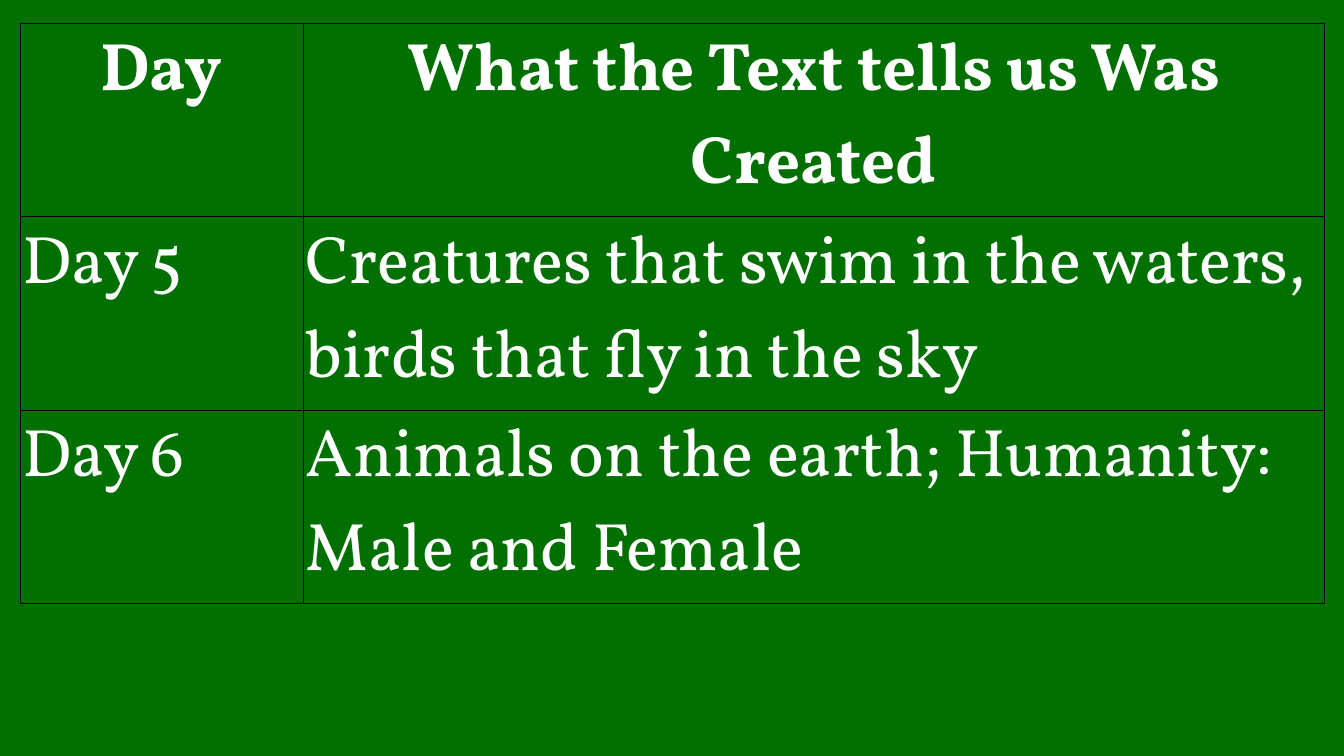
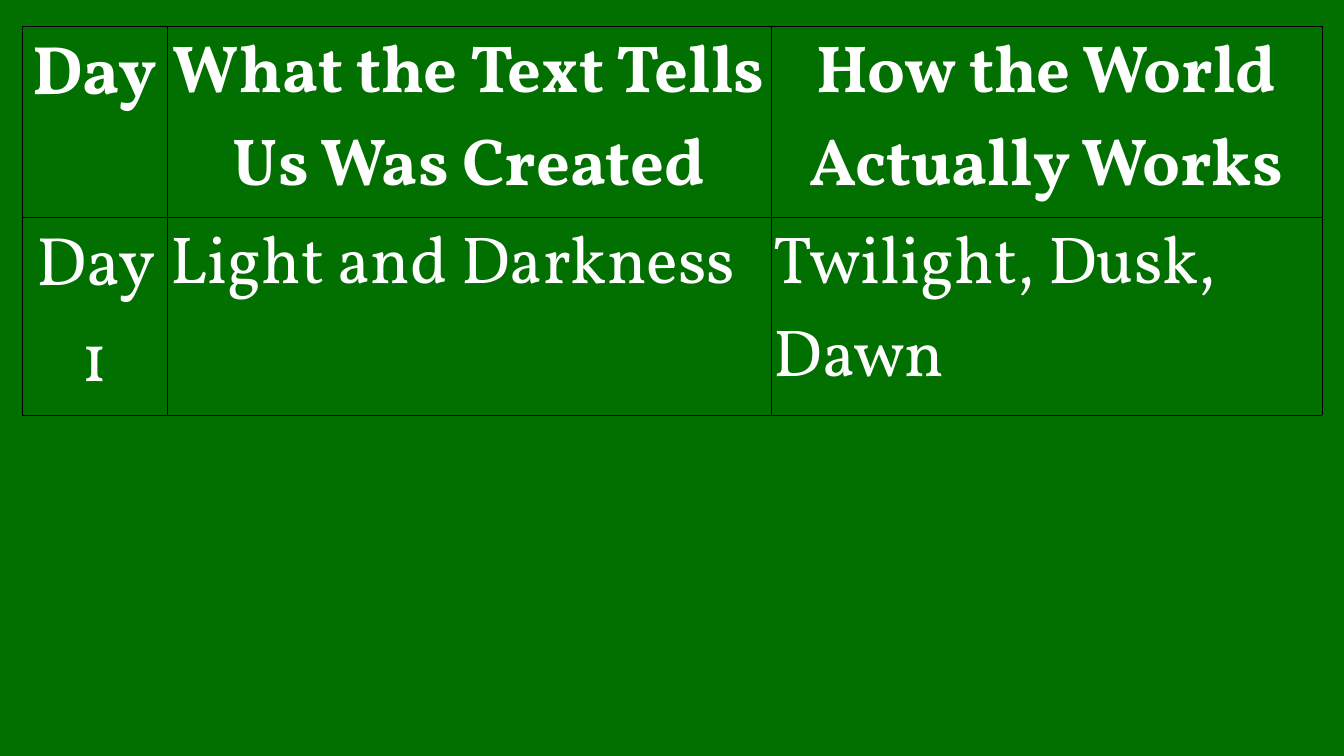
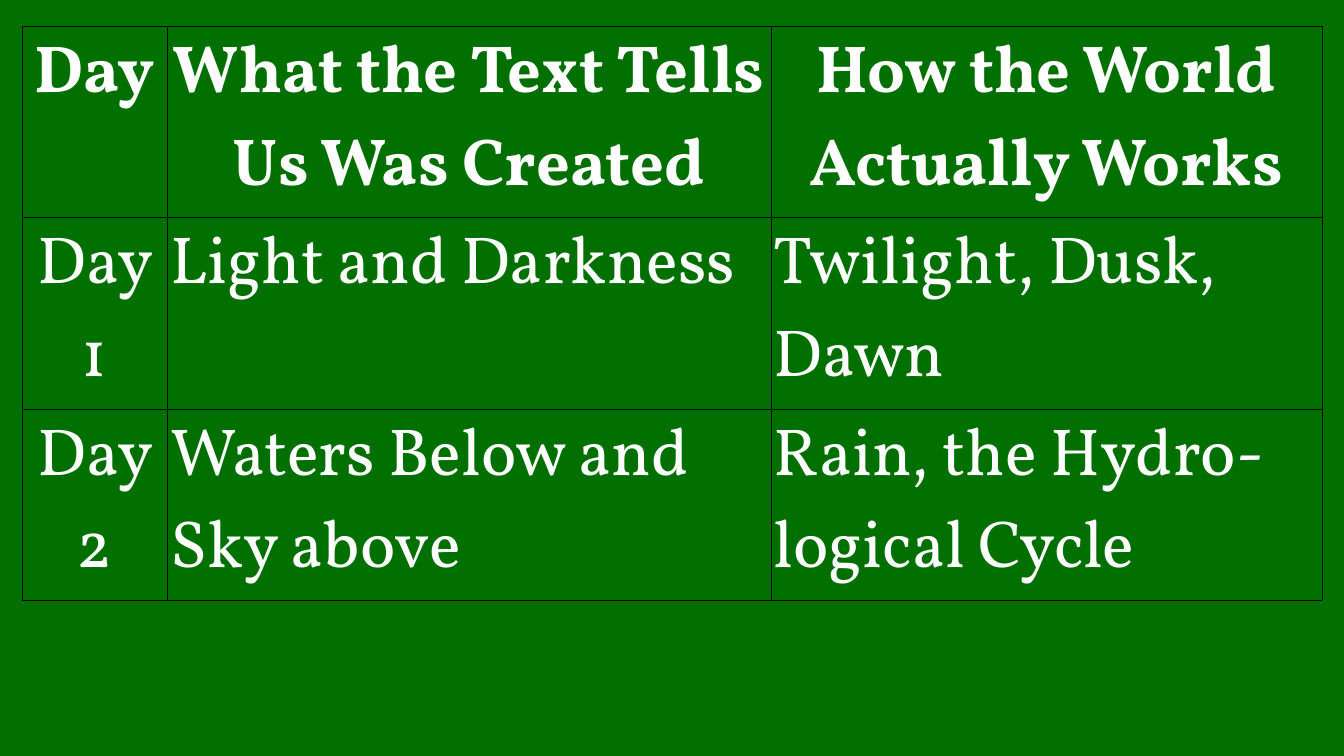
import dataclasses

import lxml.etree
import pptx
import pptx.dml.color
import pptx.enum.text
import pptx.oxml.ns
import pptx.util

Pt = pptx.util.Pt
CENTER = pptx.enum.text.PP_ALIGN.CENTER
LEFT = pptx.enum.text.PP_ALIGN.LEFT


@dataclasses.dataclass(frozen=True)
class Theme:
    green: str = "027001"
    white: str = "FFFFFF"
    black: str = "000000"
    font: str = "Vollkorn"
    wide_size: float = 96
    body_size: float = 95
    large_day_size: float = 98
    border: float = 0.35
    inset: float = 4.32


@dataclasses.dataclass(frozen=True)
class Grid:
    """Corner, column widths and row heights of a table, in points."""
    left: float
    top: float
    columns: tuple
    rows: tuple


THEME = Theme()
CREATED_GRID = Grid(28.1, 33.1, (404.64, 1459.44), (133.2, 200.88, 133.2))
COMPARED_GRID = Grid(31.68, 37.44, (207.36, 861.84, 787.68), (154.08, 103.68, 112.32))

CREATED_ROWS = [
    ("Day", "What the Text tells us Was Created"),
    ("Day 5", "Creatures that swim in the waters, birds that fly in the sky"),
    ("Day 6", "Animals on the earth; Humanity: Male and Female"),
]
COMPARED_ROWS = [
    ("Day", "What the Text Tells Us Was Created", "How the World Actually Works"),
    ("Day 1", "Light and Darkness", "Twilight, Dusk, Dawn"),
    ("Day 2", "Waters Below and Sky above", "Rain, the Hydro-logical Cycle"),
]


def color(value):
    return pptx.dml.color.RGBColor.from_string(value)


def set_attributes(target, values):
    for name, value in values.items():
        setattr(target, name, value)


def add_borders(cell):
    qn = pptx.oxml.ns.qn
    properties = cell._tc.get_or_add_tcPr()
    for position, side in enumerate(("lnL", "lnR", "lnT", "lnB")):
        line = lxml.etree.Element(qn(f"a:{side}"), w=str(int(Pt(THEME.border))))
        fill = lxml.etree.SubElement(line, qn("a:solidFill"))
        lxml.etree.SubElement(fill, qn("a:srgbClr"), val=THEME.black)
        properties.insert(position, line)


def fill_cell(cell, text, size, bold, alignment):
    cell.fill.solid()
    cell.fill.fore_color.rgb = color(THEME.green)
    sides = ("left", "right", "top", "bottom")
    set_attributes(cell, {f"margin_{side}": Pt(THEME.inset) for side in sides})
    add_borders(cell)
    para = cell.text_frame.paragraphs[0]
    para.alignment = alignment
    span = para.add_run()
    span.text = text
    set_attributes(span.font, {"name": THEME.font, "size": Pt(size), "bold": bold})
    span.font.color.rgb = color(THEME.white)


def add_day_table(page, grid, rows, day_size, text_size, day_alignment):
    heights = grid.rows[:len(rows)]
    box = (grid.left, grid.top, sum(grid.columns), sum(heights))
    frame = page.shapes.add_table(len(rows), len(grid.columns), *map(Pt, box))
    table = frame.table
    table.horz_banding = False
    for column, width in zip(table.columns, grid.columns):
        column.width = Pt(width)
    for row, height in zip(table.rows, heights):
        row.height = Pt(height)
    for row_index, texts in enumerate(rows):
        header = row_index == 0
        for column_index, text in enumerate(texts):
            is_day = column_index == 0
            alignment = CENTER if header else day_alignment if is_day else LEFT
            size = day_size if is_day else text_size
            fill_cell(table.cell(row_index, column_index), text, size, header, alignment)


def add_page(deck):
    page = deck.slides.add_slide(deck.slide_layouts[6])
    page.background.fill.solid()
    page.background.fill.fore_color.rgb = color(THEME.green)
    return page


def main():
    deck = pptx.Presentation()
    set_attributes(deck, {"slide_width": Pt(1920), "slide_height": Pt(1080)})
    tables = [
        (CREATED_GRID, CREATED_ROWS, THEME.wide_size, THEME.wide_size, LEFT),
        (COMPARED_GRID, COMPARED_ROWS[:2], THEME.large_day_size, THEME.body_size, CENTER),
        (COMPARED_GRID, COMPARED_ROWS, THEME.body_size, THEME.body_size, CENTER),
    ]
    for table in tables:
        add_day_table(add_page(deck), *table)
    deck.save("out.pptx")


if __name__ == "__main__":
    main()
